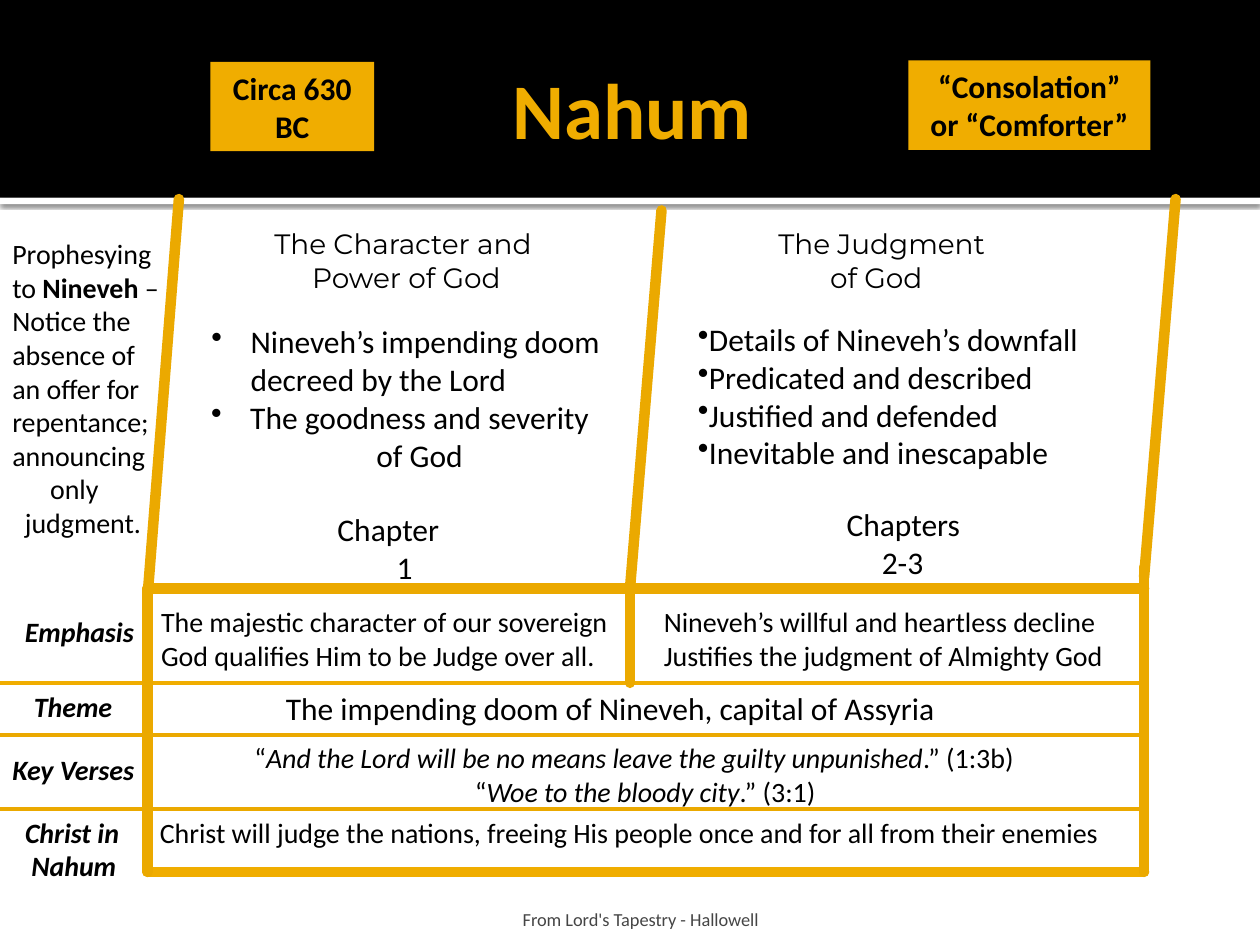
from dataclasses import dataclass

from lxml.etree import SubElement
from pptx import Presentation
from pptx.dml.color import RGBColor
from pptx.enum.shapes import MSO_CONNECTOR as Connector, MSO_SHAPE as Shape
from pptx.enum.text import MSO_ANCHOR as Anchor, PP_ALIGN as Align
from pptx.oxml.ns import qn
from pptx.util import Inches, Pt


@dataclass(frozen=True)
class Theme:
    font: str = "Calibri"
    heading_font: str = "Montserrat"
    gold: str = "F0AD00"
    rail: str = "EBA900"
    black: str = "000000"
    white: str = "FFFFFF"
    grey: str = "454545"
    title: float = 45
    large: float = 18
    body: float = 16
    footer: float = 10.5
    thick: float = 6
    thin: float = 2.25


T = Theme()
WIDTH, HEIGHT = 10, 7.5
BANNER = 1.57
LEFT, MIDDLE, RIGHT = 1.17, 5, 9.08       # upright rails
ROWS = [4.67, 5.42, 5.83, 6.42, 6.92]     # top of each table row, then the bottom
LEAN = 0.25                               # sideways shift of the slanted rails

# Each text: (left, top, width, height), lines, options.
# A line is a string or (indent, string); *stars* mark the stressed words.
LABEL = dict(bold=True, italic=True)
LARGE = dict(size=T.large)
HEADING = dict(font=T.heading_font)
HANGING = dict(size=T.large, bullet=True, hang=0.31)

TEXTS = [
    ((0.52, 0.17, 9, 1.37), ["Nahum"],
     dict(size=T.title, color=T.gold, bold=True, align=Align.CENTER, anchor=Anchor.MIDDLE)),
    ((2.85, 7.13, 6.02, 0.3), [(1.2, "From Lord's Tapestry - Hallowell")],
     dict(size=T.footer, color=T.grey, anchor=Anchor.BOTTOM)),

    ((0, 1.83, 1.5, 2.79),
     ["Prophesying", "to *Nineveh* –", "Notice the absence of", "an offer for",
      "repentance;", "announcing", (0.3, "only"), (0.1, "judgment.")],
     dict(stress="bold")),

    ((2.08, 1.75, 2.67, 0.64), ["The Character and", (0.3, "Power of God")], HEADING),
    ((1.58, 2.51, 3.35, 0.71), ["Nineveh’s impending doom decreed by the Lord"], HANGING),
    ((1.54, 3.11, 3.27, 0.73), ["The goodness and severity of God"],
     dict(HANGING, align=Align.CENTER)),
    ((2.25, 4, 1.92, 0.71), [(0.33, "Chapter"), (0.8, "1")], LARGE),

    ((6.08, 1.75, 2, 0.64), ["The Judgment", (0.41, "of God")], HEADING),
    ((5.44, 2.49, 3.43, 1.31),
     ["Details of Nineveh’s downfall", "Predicated and described",
      "Justified and defended", "Inevitable and inescapable"],
     dict(size=T.large, bullet=True)),
    ((6, 3.96, 1.75, 0.71), [(0.62, "Chapters"), (0.9, "2-3")], LARGE),

    ((0, 4.83, 1.83, 0.37), [(0.1, "Emphasis")], LABEL),
    ((1.18, 4.75, 4.05, 0.64),
     ["The majestic character of our sovereign",
      "God qualifies Him to be Judge over all."], {}),
    ((5.17, 4.75, 3.83, 0.64),
     ["Nineveh’s willful and heartless decline",
      "Justifies the judgment of Almighty God"], {}),

    ((0.17, ROWS[1], 0.85, 0.37), ["Theme"], LABEL),
    ((2.17, ROWS[1], 5.67, 0.4), ["The impending doom of Nineveh, capital of Assyria"], LARGE),

    ((0, 5.92, 1.2, 0.37), ["Key Verses"], LABEL),
    ((1.92, ROWS[2], 6.42, 0.64),
     ["“*And the Lord will be no means leave the guilty unpunished*.” (1:3b)",
      (1.75, "“*Woe to the bloody city*.” (3:1)")],
     dict(stress="italic")),

    ((0, ROWS[3], 1.08, 0.64), [(0.1, "Christ in"), (0.15, "Nahum")], LABEL),
    ((LEFT, ROWS[3], 8, 0.37),
     ["Christ will judge the nations, freeing His people once and for all from their enemies"],
     {}),
]

TAGS = [
    ((1.67, 0.49, 1.3, 0.71), "Circa 630 BC"),
    ((7.21, 0.48, 1.92, 0.71), "“Consolation” or “Comforter”"),
]

# Rails: start x, start y, end x, end y, colour, width
SLANTED = [
    (x + LEAN, top, x, bottom, T.rail, T.thick)
    for x, top, bottom in [(LEFT, 1.58, 4.75), (RIGHT, 1.58, 4.58), (MIDDLE, 1.67, ROWS[0])]
]
UPRIGHT = [
    (x, top, x, bottom, T.rail, T.thick)
    for x, top, bottom in [(LEFT, ROWS[0], ROWS[-1]), (RIGHT, 4.5, ROWS[-1]),
                           (MIDDLE, ROWS[0], ROWS[1])]
]
LEVEL = [
    (LEFT, ROWS[0], RIGHT, ROWS[0], T.rail, T.thick),
    (LEFT, ROWS[-1], RIGHT, ROWS[-1], T.gold, T.thick),
] + [
    (0, y, RIGHT, y, color, T.thin)
    for y, color in zip(ROWS[1:4], [T.gold, T.rail, T.rail])
]


def rgb(color):
    return RGBColor.from_string(color)


def add_block(slide, box, color):
    block = slide.shapes.add_shape(Shape.RECTANGLE, *map(Inches, box))
    block.shadow.inherit = False
    block.fill.solid()
    block.fill.fore_color.rgb = rgb(color)
    block.line.fill.background()
    return block


def cast_shadow(block):
    effects = block.element.spPr.find(qn("a:effectLst"))
    shadow = SubElement(effects, qn("a:outerShdw"), blurRad=str(Pt(2.5)),
                        dist=str(Pt(0.8)), dir="5400000", rotWithShape="0")
    tone = SubElement(shadow, qn("a:srgbClr"), val=T.black)
    SubElement(tone, qn("a:alpha"), val="60000")


def add_rail(slide, x1, y1, x2, y2, color, width):
    rail = slide.shapes.add_connector(Connector.STRAIGHT, *map(Inches, (x1, y1, x2, y2)))
    rail.line.color.rgb = rgb(color)
    rail.line.width = Pt(width)
    rail.line._get_or_add_ln().set("cap", "rnd")
    SubElement(rail.element.spPr, qn("a:effectLst"))


def write(frame, lines, size=T.body, color=T.black, font=T.font, bold=False, italic=False,
          align=Align.LEFT, anchor=Anchor.TOP, bullet=False, hang=0, stress=None):
    frame.word_wrap = True
    frame.vertical_anchor = anchor
    for number, line in enumerate(lines):
        indent, words = line if isinstance(line, tuple) else (hang, line)
        paragraph = frame.add_paragraph() if number else frame.paragraphs[0]
        paragraph.alignment = align
        style = paragraph.font
        style.size, style.name, style.bold, style.italic = Pt(size), font, bold, italic
        style.color.rgb = rgb(color)
        layout = paragraph._p.get_or_add_pPr()
        layout.set("marL", str(Inches(indent)))
        layout.set("indent", str(-Inches(hang)))
        if bullet:
            mark = layout.makeelement(qn("a:buChar"), {"char": "•"})
            layout.insert_element_before(mark, "a:tabLst", "a:defRPr", "a:extLst")
        for place, part in enumerate(words.split("*")):
            run = paragraph.add_run()
            run.text = part
            if place % 2:
                setattr(run.font, stress, True)


def main():
    deck = Presentation()
    deck.slide_width, deck.slide_height = Inches(WIDTH), Inches(HEIGHT)
    slide = deck.slides.add_slide(deck.slide_layouts[6])

    cast_shadow(add_block(slide, (0, BANNER, WIDTH, 0.05), T.white))
    add_block(slide, (0, 0, WIDTH, BANNER), T.black)
    for rail in SLANTED + LEVEL + UPRIGHT:
        add_rail(slide, *rail)
    for box, lines, options in TEXTS:
        write(slide.shapes.add_textbox(*map(Inches, box)).text_frame, lines, **options)
    for box, words in TAGS:
        write(add_block(slide, box, T.gold).text_frame, [words], size=T.large, bold=True,
              align=Align.CENTER, anchor=Anchor.MIDDLE)

    deck.save("out.pptx")


if __name__ == "__main__":
    main()
